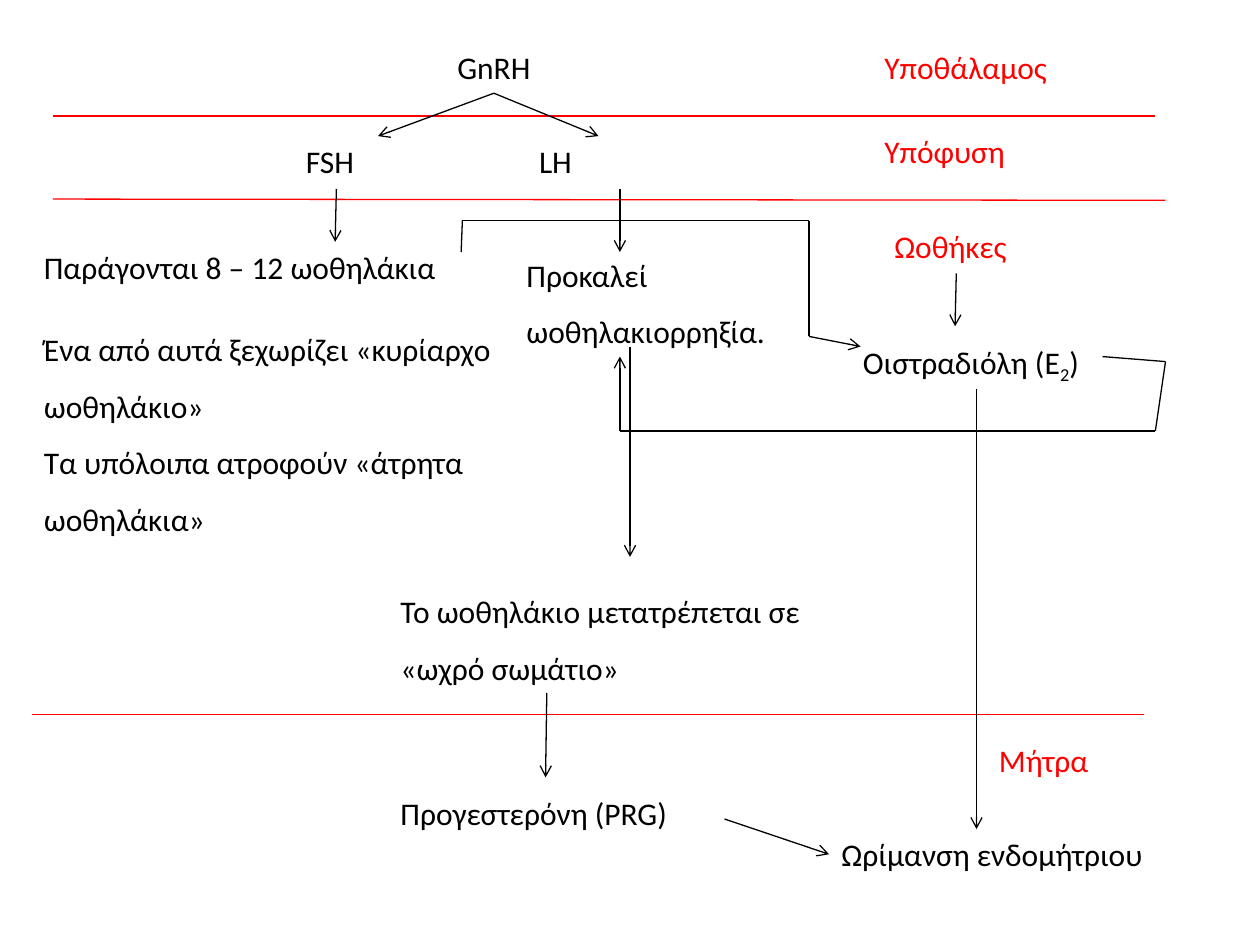
from itertools import pairwise

from lxml import etree
from pptx import Presentation, util as u
from pptx.dml.color import RGBColor
from pptx.enum import shapes, text
from pptx.oxml import ns

BLACK, RED = "000000", "FF0000"

# Organ labels: text, left, top, width, height
ORGANS = [
    ("Υποθάλαμος", 6.92, 0.33, 2, 0.42),
    ("Υπόφυση", 6.92, 1, 1.5, 0.4),
    ("Ωοθήκες", 7, 1.75, 1.5, 0.4),
    ("Μήτρα", 7.83, 5.83, 1.33, 0.42),
]

# Hormones and single-line effects: text, left, top, width, height
HORMONES = [
    ("FSH", 2.33, 1.08, 1, 0.4),
    ("LH", 4.18, 1.08, 1, 0.4),
    ("Παράγονται 8 – 12 ωοθηλάκια", 0.25, 1.92, 4, 0.4),
    ("Προγεστερόνη (PRG)", 3.08, 6.25, 2.92, 0.4),
    ("Ωρίμανση ενδομήτριου", 6.58, 6.58, 3.08, 0.4),
]

# Wrapped effects with open line spacing; each newline starts a paragraph
EFFECTS = [
    ("Ένα από αυτά ξεχωρίζει «κυρίαρχο ωοθηλάκιο»\n"
     "Τα υπόλοιπα ατροφούν «άτρητα ωοθηλάκια»", 0.25, 2.42, 4.08, 1.92),
    ("Προκαλεί ωοθηλακιορρηξία.", 4.08, 1.83, 2.42, 0.95),
    ("Το ωοθηλάκιο μετατρέπεται σε «ωχρό σωμάτιο»", 3.08, 4.5, 3.42, 1.01),
]

# Borders between organs
BORDERS = [
    [(0.42, 0.92), (9.17, 0.92)],
    [(0.42, 1.58), (9.25, 1.59)],
    [(0.25, 5.67), (9.08, 5.67)],
]

# Arrow routes; the last point carries the head
ROUTES = [
    [(3.92, 0.74), (3, 1.08)],
    [(3.92, 0.74), (4.75, 1.08)],
    [(2.67, 1.5), (2.66, 1.92)],
    [(4.92, 1.5), (4.92, 2)],
    [(7.59, 2.17), (7.58, 2.59)],
    [(5, 2.75), (5, 4.42)],
    [(7.75, 3.09), (7.75, 6.58)],
    [(4.34, 5.5), (4.33, 6.17)],
    [(5.75, 6.5), (6.58, 6.78)],
    # follicles to estradiol
    [(3.66, 2), (3.67, 1.75), (6.42, 1.75), (6.42, 2.67), (6.83, 2.75)],
    # estradiol back to ovulation
    [(8.75, 2.83), (9.25, 2.87), (9.17, 3.42), (4.92, 3.42), (4.92, 2.83)],
]


def color(code):
    return RGBColor.from_string(code)


def style(span, code):
    span.font.name = "Calibri"
    span.font.size = u.Pt(18)
    span.font.color.rgb = color(code)


def add_label(page, words, left, top, width, height, code=BLACK, spacing=None):
    box = page.shapes.add_textbox(*map(u.Inches, (left, top, width, height)))
    frame = box.text_frame
    frame.word_wrap = True
    frame.auto_size = text.MSO_AUTO_SIZE.SHAPE_TO_FIT_TEXT
    frame.text = words
    for para in frame.paragraphs:
        if spacing:
            para.line_spacing = spacing
        for span in para.runs:
            style(span, code)
    return frame.paragraphs[0]


def add_route(page, points, code, arrow=False):
    for start, end in pairwise(points):
        line = page.shapes.add_connector(
            shapes.MSO_CONNECTOR.STRAIGHT, *map(u.Inches, start + end))
        line.line.color.rgb = color(code)
        line.line.width = u.Pt(0.75)
        if arrow and end == points[-1]:
            etree.SubElement(line.line._get_or_add_ln(), ns.qn("a:tailEnd"), type="arrow")
        etree.SubElement(line._element.spPr, ns.qn("a:effectLst"))


def main():
    deck = Presentation()
    deck.slide_width, deck.slide_height = u.Inches(10), u.Inches(7.5)
    page = deck.slides.add_slide(deck.slide_layouts[6])

    # Borders and arrows
    for points in BORDERS:
        add_route(page, points, RED)
    for points in ROUTES:
        add_route(page, points, BLACK, arrow=True)

    # Labels
    for label in ORGANS:
        add_label(page, *label, code=RED)
    for label in HORMONES:
        add_label(page, *label)
    for label in EFFECTS:
        add_label(page, *label, spacing=1.5)

    # Centred top hormone
    para = add_label(page, "GnRH", 2.67, 0.33, 2.5, 0.4)
    para.alignment = text.PP_ALIGN.CENTER

    # Estradiol with its subscript
    para = add_label(page, "Οιστραδιόλη (Ε", 6.75, 2.67, 2.5, 0.4)
    for words, baseline in (("2", "-25000"), (")", "0")):
        span = para.add_run()
        span.text = words
        style(span, BLACK)
        span._r.get_or_add_rPr().set("baseline", baseline)

    deck.save("out.pptx")


if __name__ == "__main__":
    main()
